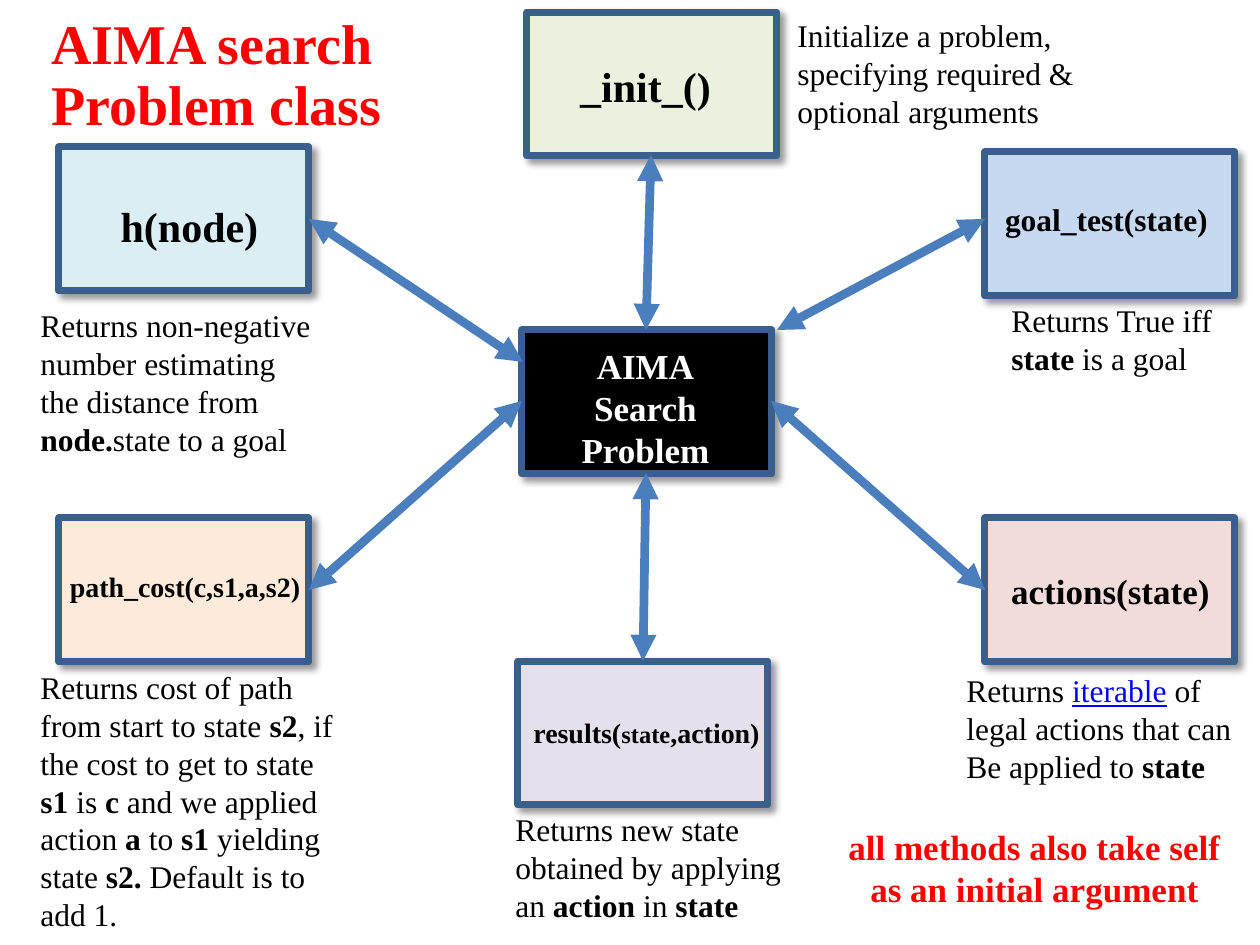
from dataclasses import dataclass
from typing import Optional

from lxml.etree import SubElement
from pptx import Presentation
from pptx.dml.color import RGBColor
from pptx.enum.shapes import MSO_CONNECTOR as Connector, MSO_SHAPE as Shape
from pptx.enum.text import MSO_AUTO_SIZE as AutoSize, PP_ALIGN as Align
from pptx.oxml.ns import qn
from pptx.util import Emu, Pt

BLACK = RGBColor(0x00, 0x00, 0x00)
WHITE = RGBColor(0xFF, 0xFF, 0xFF)
RED = RGBColor(0xFF, 0x00, 0x00)
LINK_BLUE = RGBColor(0x00, 0x00, 0xFF)
BORDER = RGBColor(0x3A, 0x5F, 0x8C)
ARROW = RGBColor(0x4B, 0x7E, 0xBC)
PINK = RGBColor(0xF2, 0xDC, 0xDB)
LILAC = RGBColor(0xE6, 0xE0, 0xEC)
AQUA = RGBColor(0xDB, 0xEE, 0xF4)
SKY = RGBColor(0xC6, 0xD9, 0xF1)
PEACH = RGBColor(0xFD, 0xEA, 0xDA)
OLIVE = RGBColor(0xEB, 0xF1, 0xDE)
BOX_WIDTH, BOX_HEIGHT = 250, 144


@dataclass
class Run:
    text: str
    bold: bool = True
    size: Optional[int] = None
    color: Optional[RGBColor] = None
    underline: bool = False


class ClassDiagram:
    """Draws method boxes, arrows and notes on one slide, in px."""

    font = "Times New Roman"
    scale = 914400 / 126

    def __init__(self, deck):
        deck.slide_width, deck.slide_height = self.emu(1260, 945)
        self.shapes = deck.slides.add_slide(deck.slide_layouts[6]).shapes

    def emu(self, *lengths):
        return [Emu(round(length * self.scale)) for length in lengths]

    def box(self, left, top, fill):
        box = self.shapes.add_shape(
            Shape.RECTANGLE, *self.emu(left, top, BOX_WIDTH, BOX_HEIGHT))
        box.fill.solid()
        box.fill.fore_color.rgb = fill
        box.line.color.rgb = BORDER
        box.line.width = Pt(4)
        box.shadow.inherit = False
        effects = box.element.spPr.find(qn("a:effectLst"))
        shadow = SubElement(effects, qn("a:outerShdw"), blurRad=str(Pt(4)),
                            dist=str(Pt(3)), dir="2700000", rotWithShape="0")
        color = SubElement(shadow, qn("a:srgbClr"), val=str(BLACK))
        SubElement(color, qn("a:alpha"), val="40000")

    def arrow(self, start, end):
        line = self.shapes.add_connector(
            Connector.STRAIGHT, *self.emu(*start, *end))
        line.line.color.rgb = ARROW
        line.line.width = Pt(5)
        outline = line.line._get_or_add_ln()
        for tag in ("a:headEnd", "a:tailEnd"):
            SubElement(outline, qn(tag), type="triangle")
        SubElement(line.element.spPr, qn("a:effectLst"))

    def text(self, place, paragraphs, size=18, color=BLACK, align=Align.LEFT,
             wrap=True, spacing=None):
        frame = self.shapes.add_textbox(*self.emu(*place)).text_frame
        frame.word_wrap = wrap
        frame.auto_size = AutoSize.SHAPE_TO_FIT_TEXT
        for index, runs in enumerate(paragraphs):
            para = frame.add_paragraph() if index else frame.paragraphs[0]
            para.alignment = align
            para.line_spacing = spacing
            for run in runs:
                self.run(para, run, size, color)

    def run(self, para, run, size, color):
        if isinstance(run, str):
            run = Run(run, bold=False)
        for index, part in enumerate(run.text.split("\n")):
            if index:
                para.add_line_break()
            if part:
                span = para.add_run()
                span.text = part
                span.font.name = self.font
                span.font.size = Pt(run.size or size)
                span.font.bold = run.bold
                span.font.underline = run.underline
                span.font.color.rgb = run.color or color


def main():
    deck = Presentation()
    diagram = ClassDiagram(deck)
    left, right, upper, lower = 59, 985, 219, 590

    boxes = [
        (522, 330, BLACK, (527, 338, 237, 140), 20, WHITE,
         [[Run("AIMA\nSearch")], [Run("Problem")]]),
        (right, 518, PINK, (992, 563, 237, 55), 20, BLACK,
         [[Run("actions(state)")]]),
        (518, 661, LILAC, (518, 709, 257, 47), 16, BLACK,
         [[Run("results("), Run("state", size=14), Run(",action)")]]),
        (left, 147, AQUA, (71, 194, 237, 50), 24, BLACK,
         [[Run("h(node)")]]),
        (right, 152, SKY, (985, 194, 243, 50), 18, BLACK,
         [[Run("goal_test(state)")]]),
        (left, 518, PEACH, (54, 563, 262, 47), 16, BLACK,
         [[Run("path_cost(c,s1,a,s2)")]]),
        (527, 12, OLIVE, (527, 54, 237, 50), 24, BLACK,
         [[Run("_init_()")]]),
    ]
    for x, y, fill, place, size, color, label in boxes:
        diagram.box(x, y, fill)
        diagram.text(place, label, size, color, Align.CENTER)

    arrows = [
        ((651, 155), (646, 330)),
        ((right, upper), (777, 330)),
        ((right, lower), (771, 401)),
        ((643, 661), (646, 473)),
        ((left + BOX_WIDTH, lower), (522, 401)),
        ((left + BOX_WIDTH, upper), (523, 362)),
    ]
    for start, end in arrows:
        diagram.arrow(start, end)

    iterable = Run("iterable", False, color=LINK_BLUE, underline=True)
    diagram.text((954, 665, 294, 127), [
        ["Returns ", iterable, " of\nlegal actions that can"],
        ["Be applied to ", Run("state")]], wrap=False)
    diagram.text((999, 295, 228, 89), [
        ["Returns True iff\n", Run("state"), " is a goal"]], wrap=False)
    diagram.text((503, 804, 302, 127), [
        ["Returns new state obtained by applying an ", Run("action"), " in ",
         Run("state")]])
    diagram.text((28, 662, 319, 280), [
        ["Returns cost of path from start to state ", Run("s2"),
         ", if the cost to get to state ", Run("s1"), " is ", Run("c"),
         " and we applied action ", Run("a"), " to ", Run("s1"),
         " yielding state ", Run("s2. "), "Default is to add 1."]])
    diagram.text((28, 300, 302, 165), [
        ["Returns non-negative number estimating the distance from ",
         Run("node."), "state to a goal"]])
    diagram.text((785, 10, 302, 127), [
        ["Initialize a problem, specifying required & optional arguments"]])
    diagram.text((828, 819, 413, 97), [
        [Run("all methods also take self\nas an initial argument")]],
        20, RED, Align.CENTER)
    diagram.text((39, 10, 365, 135), [
        [Run("AIMA search")], [Run("Problem class")]], 32, RED, spacing=0.9)
    deck.save("out.pptx")


if __name__ == "__main__":
    main()
